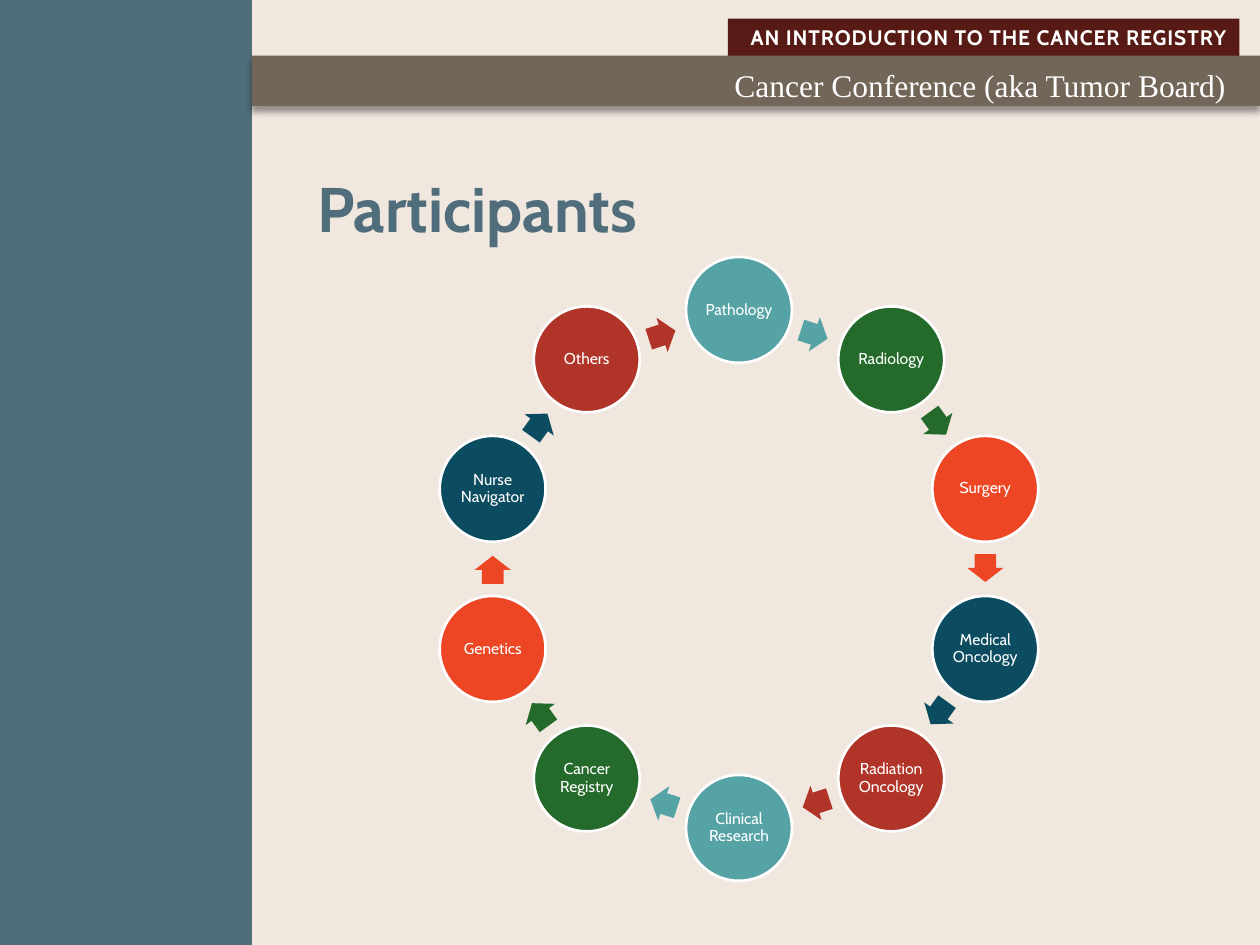
import math
from dataclasses import dataclass

import pptx
import pptx.dml.color
import pptx.enum.shapes
import pptx.enum.text
import pptx.oxml
import pptx.oxml.ns
import pptx.util

Pt = pptx.util.Pt
SHAPE = pptx.enum.shapes.MSO_SHAPE
ALIGN = pptx.enum.text.PP_ALIGN
ANCHOR = pptx.enum.text.MSO_ANCHOR
AUTO = pptx.enum.text.MSO_AUTO_SIZE

COLORS = {
    "cream": "F0E7DF", "slate": "506D7B", "maroon": "581A14", "taupe": "726658",
    "white": "FFFFFF", "teal": "56A3A5", "green": "246B2B", "orange": "ED4624",
    "navy": "0C4C61", "red": "B13428",
}
RING_X, RING_Y, RADIUS = 422.3, 325.1, 148
DIAMETER = 60.5
ARROW_W, ARROW_H, ARROW_BACK = 16, 20.6, 0.5
SHADOW = (
    '<a:effectLst xmlns:a="http://schemas.openxmlformats.org/drawingml/2006/main">'
    '<a:outerShdw blurRad="50800" dist="38100" dir="5400000" rotWithShape="0">'
    '<a:srgbClr val="000000"><a:alpha val="40000"/></a:srgbClr>'
    '</a:outerShdw></a:effectLst>'
)


@dataclass
class Box:
    left: float
    top: float
    width: float
    height: float

    def lengths(self) -> tuple:
        return Pt(self.left), Pt(self.top), Pt(self.width), Pt(self.height)


@dataclass
class Style:
    size: float
    font: str = "Cabin"
    color: str = "white"
    bold: bool = False
    align: int = ALIGN.LEFT
    anchor: int = ANCHOR.TOP


@dataclass
class Participant:
    name: str
    color: str


PARTICIPANTS = [
    Participant("Pathology", "teal"),
    Participant("Radiology", "green"),
    Participant("Surgery", "orange"),
    Participant("Medical Oncology", "navy"),
    Participant("Radiation Oncology", "red"),
    Participant("Clinical Research", "teal"),
    Participant("Cancer Registry", "green"),
    Participant("Genetics", "orange"),
    Participant("Nurse Navigator", "navy"),
    Participant("Others", "red"),
]


def rgb(name: str) -> pptx.dml.color.RGBColor:
    return pptx.dml.color.RGBColor.from_string(COLORS[name])


def add_shape(s, kind, box: Box, color: str):
    sp = s.shapes.add_shape(kind, *box.lengths())
    sp.shadow.inherit = False
    sp.fill.solid()
    sp.fill.fore_color.rgb = rgb(color)
    sp.line.fill.background()
    return sp


def write(sp, text: str, style: Style, spacing=None):
    tf = sp.text_frame
    tf.word_wrap = True
    tf.vertical_anchor = style.anchor
    tf.text = text
    p = tf.paragraphs[0]
    p.alignment = style.align
    if spacing is not None:
        p.line_spacing = spacing
    r = p.runs[0]
    r.font.name = style.font
    r.font.size = Pt(style.size)
    r.font.bold = style.bold
    r.font.color.rgb = rgb(style.color)
    return r


def add_header(s) -> None:
    add_shape(s, SHAPE.RECTANGLE, Box(0, 0, 144, 540), "slate")

    sp = add_shape(s, SHAPE.RECTANGLE, Box(416, 10.6, 292.3, 21.8), "maroon")
    r = write(sp, "AN INTRODUCTION TO THE CANCER REGISTRY",
              Style(12, bold=True, align=ALIGN.RIGHT))
    r.font._element.set("spc", "50")
    sp.text_frame.auto_size = AUTO.SHAPE_TO_FIT_TEXT

    band = add_shape(s, SHAPE.RECTANGLE, Box(144, 31.8, 576, 28.8), "taupe")
    effects = band._element.spPr.find(pptx.oxml.ns.qn("a:effectLst"))
    effects.getparent().replace(effects, pptx.oxml.parse_xml(SHADOW))

    sp = s.shapes.add_textbox(*Box(314.6, 27.4, 393.1, 34.6).lengths())
    write(sp, "Cancer Conference (aka Tumor Board)",
          Style(18, font="Times New Roman", align=ALIGN.RIGHT), Pt(28.6))
    sp.text_frame.auto_size = AUTO.SHAPE_TO_FIT_TEXT

    sp = s.shapes.add_textbox(*Box(174.2, 71.3, 496.1, 104.4).lengths())
    write(sp, "Participants",
          Style(36, color="slate", bold=True, anchor=ANCHOR.MIDDLE), Pt(33.2))


def add_participant(s, person: Participant, angle: float) -> None:
    x = RING_X + RADIUS * math.sin(angle)
    y = RING_Y - RADIUS * math.cos(angle)
    box = Box(x - DIAMETER / 2, y - DIAMETER / 2, DIAMETER, DIAMETER)
    sp = add_shape(s, SHAPE.OVAL, box, person.color)
    sp.line.color.rgb = rgb("white")
    sp.line.width = Pt(1.5)
    tf = sp.text_frame
    tf.margin_left = tf.margin_top = tf.margin_right = tf.margin_bottom = Pt(0.9)
    write(sp, person.name, Style(9, align=ALIGN.CENTER, anchor=ANCHOR.MIDDLE), 0.9)


def add_arrow(s, color: str, angle: float, half_step: float) -> None:
    reach = RADIUS * math.cos(half_step)
    x = RING_X + reach * math.sin(angle) - ARROW_BACK * math.cos(angle)
    y = RING_Y - reach * math.cos(angle) - ARROW_BACK * math.sin(angle)
    box = Box(x - ARROW_W / 2, y - ARROW_H / 2, ARROW_W, ARROW_H)
    sp = add_shape(s, SHAPE.RIGHT_ARROW, box, color)
    sp.adjustments[0] = 0.6
    sp.adjustments[1] = 0.5
    sp.rotation = round(math.degrees(angle))


def main() -> None:
    prs = pptx.Presentation()
    prs.slide_width, prs.slide_height = Pt(720), Pt(540)
    s = prs.slides.add_slide(prs.slide_layouts[6])
    s.background.fill.solid()
    s.background.fill.fore_color.rgb = rgb("cream")
    add_header(s)
    step = 2 * math.pi / len(PARTICIPANTS)
    for i, person in enumerate(PARTICIPANTS):
        add_participant(s, person, i * step)
        add_arrow(s, person.color, (i + 0.5) * step, step / 2)
    prs.save("out.pptx")


if __name__ == "__main__":
    main()
